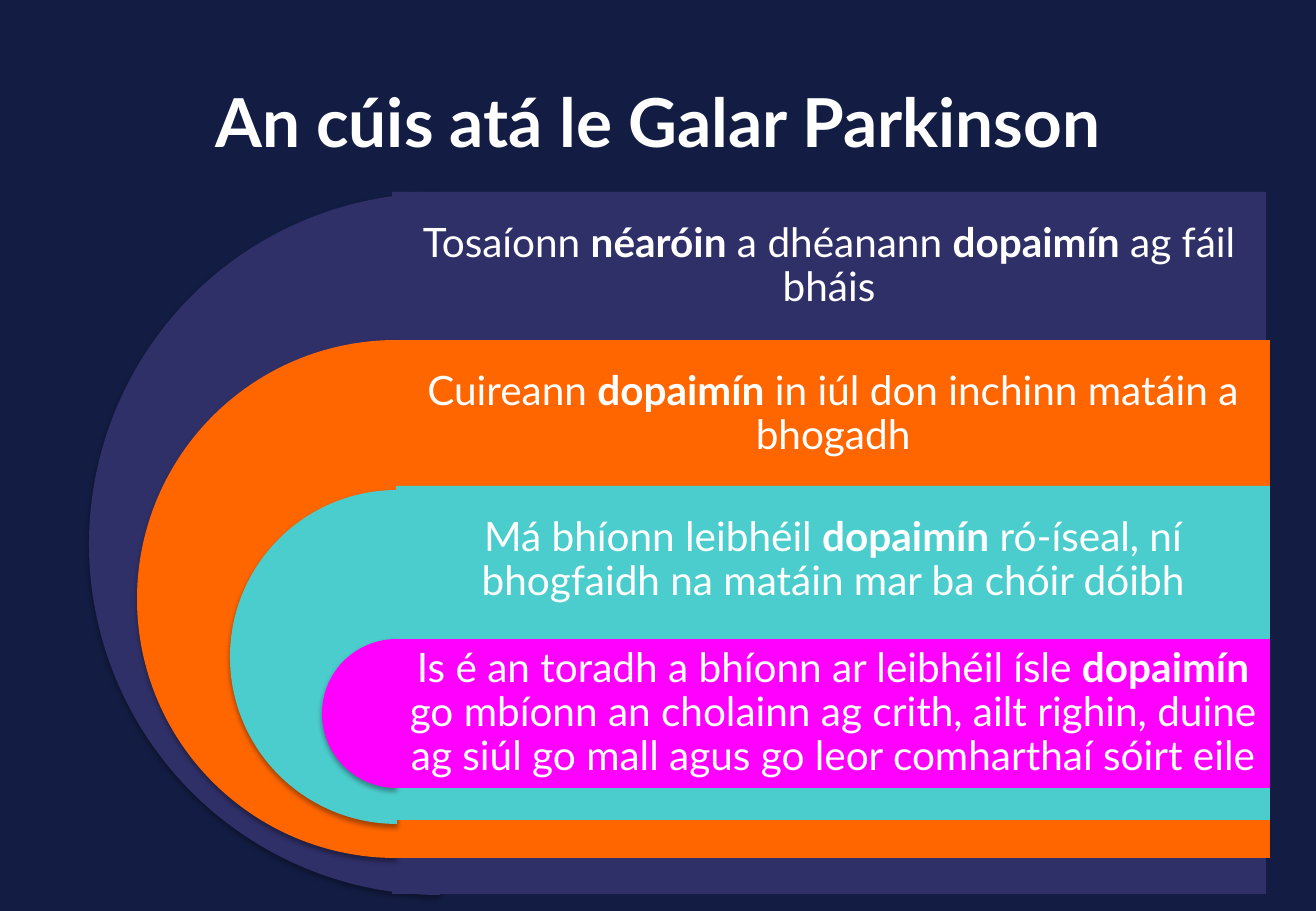
"""Builds the slide on the cause of Parkinson's disease."""
from lxml.etree import SubElement
from pptx import Presentation
from pptx.dml.color import RGBColor
from pptx.enum.shapes import MSO_SHAPE
from pptx.enum.text import MSO_ANCHOR, PP_ALIGN
from pptx.oxml.ns import qn
from pptx.util import Emu, Pt

EMU_PER_PX = 914400 / 121.5
SLIDE_WIDTH, SLIDE_HEIGHT = 1316, 911
BAND_WIDTH, TEXT_HEIGHT, INSET = 874, 149, 12
COLOURS = {
    "background": "131D43",
    "text": "FFFFFF",
    "shadow": "000000",
    "neurons": "303069",
    "signal": "FF6600",
    "low_level": "4CCDCD",
    "result": "FF00FF",
}
LAYERS = [
    ("neurons", 89, 193, 392, 192, 702,
     "Tosaíonn *néaróin* a dhéanann *dopaimín* ag fáil bháis"),
    ("signal", 137, 340, 396, 340, 518,
     "Cuireann *dopaimín* in iúl don inchinn matáin a bhogadh"),
    ("low_level", 230, 490, 396, 486, 334,
     "Má bhíonn leibhéil *dopaimín* ró-íseal, ní bhogfaidh na matáin mar ba chóir dóibh"),
    ("result", 322, 639, 396, 639, 149,
     "Is é an toradh a bhíonn ar leibhéil ísle *dopaimín *go mbíonn an cholainn ag crith, "
     "ailt righin, duine ag siúl go mall agus go leor comharthaí sóirt eile"),
]


def px(length):
    return Emu(round(length * EMU_PER_PX))


class SlideBuilder:
    def __init__(self, presentation, font_name):
        self.font_name = font_name
        self.slide = presentation.slides.add_slide(presentation.slide_layouts[5])
        fill = self.slide.background.fill
        fill.solid()
        fill.fore_color.rgb = self.colour("background")

    def colour(self, name):
        return RGBColor.from_string(COLOURS[name])

    def format_run(self, run, size, bold):
        run.font.name = self.font_name
        run.font.size = Pt(size)
        run.font.bold = bold
        run.font.color.rgb = self.colour("text")

    def title(self, text, left, top, width, height):
        title = self.slide.shapes.title
        title.left, title.top = px(left), px(top)
        title.width, title.height = px(width), px(height)
        title.text_frame.text = text
        title.text_frame.vertical_anchor = MSO_ANCHOR.MIDDLE
        paragraph = title.text_frame.paragraphs[0]
        paragraph.alignment = PP_ALIGN.CENTER
        self.format_run(paragraph.runs[0], 40, True)

    def shape(self, kind, left, top, width, height, colour):
        shape = self.slide.shapes.add_shape(kind, px(left), px(top), px(width), px(height))
        shape.shadow.inherit = False
        shape.fill.solid()
        shape.fill.fore_color.rgb = self.colour(colour)
        shape.line.fill.background()
        return shape

    def half_disc(self, left, top, diameter, colour):
        shape = self.shape(MSO_SHAPE.PIE, left, top, diameter, diameter, colour)
        shape.adjustments[0] = 54
        shape.adjustments[1] = 162
        effects = shape.element.spPr.find(qn("a:effectLst"))
        shadow = SubElement(effects, qn("a:outerShdw"), blurRad=str(Pt(3.1)),
                            dist=str(Pt(1.8)), dir="5400000", rotWithShape="0")
        tint = SubElement(shadow, qn("a:srgbClr"), val=COLOURS["shadow"])
        SubElement(tint, qn("a:alpha"), val="35000")

    def band(self, left, top, height, colour):
        self.shape(MSO_SHAPE.RECTANGLE, left, top, BAND_WIDTH, height, colour)

    def statement(self, marked_text, left, top):
        box = self.slide.shapes.add_textbox(px(left), px(top), px(BAND_WIDTH), px(TEXT_HEIGHT))
        frame = box.text_frame
        frame.word_wrap = True
        frame.vertical_anchor = MSO_ANCHOR.MIDDLE
        frame.margin_left = frame.margin_right = px(INSET)
        frame.margin_top = frame.margin_bottom = px(INSET)
        paragraph = frame.paragraphs[0]
        paragraph.alignment = PP_ALIGN.CENTER
        paragraph.line_spacing = 0.9
        for index, part in enumerate(marked_text.split("*")):
            run = paragraph.add_run()
            run.text = part
            self.format_run(run, 24, index % 2 == 1)


def main():
    presentation = Presentation()
    presentation.slide_width = px(SLIDE_WIDTH)
    presentation.slide_height = px(SLIDE_HEIGHT)
    builder = SlideBuilder(presentation, "Lato")
    builder.title("An cúis atá le Galar Parkinson", 0, 73, SLIDE_WIDTH, 95)
    for colour, disc_left, disc_top, band_left, band_top, height, text in LAYERS:
        builder.half_disc(disc_left, disc_top, height, colour)
        builder.band(band_left, band_top, height, colour)
        builder.statement(text, band_left, band_top)
    presentation.save("out.pptx")


if __name__ == "__main__":
    main()
